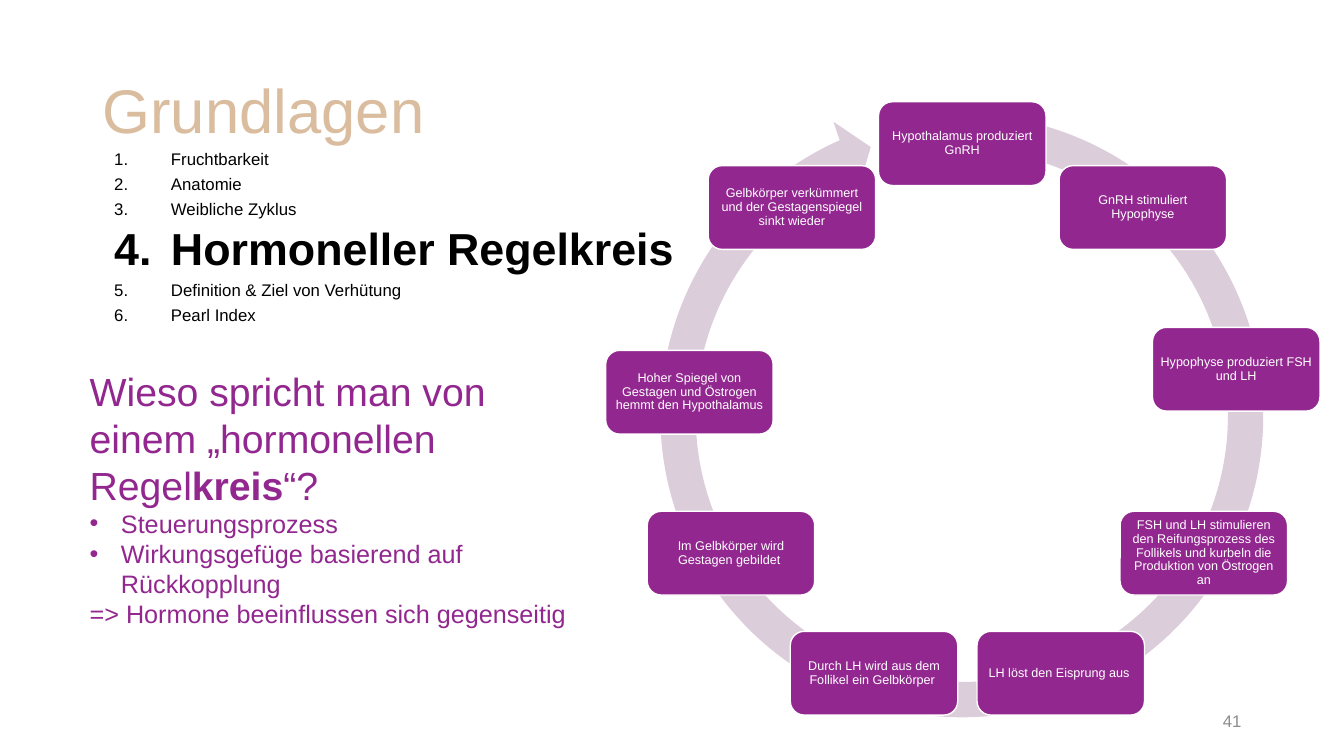
from math import cos, radians, sin

from lxml import etree
from pptx import Presentation
from pptx.dml.color import RGBColor
from pptx.enum.shapes import MSO_SHAPE
from pptx.enum.text import MSO_ANCHOR, MSO_AUTO_SIZE, PP_ALIGN
from pptx.oxml.ns import qn
from pptx.util import Cm, Pt

ARROW, ROUNDED = MSO_SHAPE.CIRCULAR_ARROW, MSO_SHAPE.ROUNDED_RECTANGLE
MIDDLE, NO_FIT = MSO_ANCHOR.MIDDLE, MSO_AUTO_SIZE.NONE
LEFT, CENTER, RIGHT = PP_ALIGN.LEFT, PP_ALIGN.CENTER, PP_ALIGN.RIGHT

FONT = "Arial"
COLORS = {"title": "DABC9E", "purple": "92278F", "ring": "DCCDDB",
          "black": "000000", "white": "FFFFFF", "grey": "8C8C8C"}

TOPICS = ["Fruchtbarkeit", "Anatomie", "Weibliche Zyklus",
          "Hormoneller Regelkreis", "Definition & Ziel von Verhütung",
          "Pearl Index"]
CURRENT_TOPIC = 3

QUESTION = ["Wieso spricht man von einem „hormonellen Regel", "kreis", "“?"]
ANSWERS = ["Steuerungsprozess", "Wirkungsgefüge basierend auf Rückkopplung",
           "=> Hormone beeinflussen sich gegenseitig"]

# Cycle steps, clockwise from the top: text, shift from the circle in cm
STEPS = [
    ("Hypothalamus produziert GnRH", -0.13, 0),
    ("GnRH stimuliert Hypophyse", 0, 0),
    ("Hypophyse produziert FSH und LH", 0, 0),
    ("FSH und LH stimulieren den Reifungsprozess des Follikels und "
     "kurbeln die Produktion von Östrogen an", 0, 0),
    ("LH löst den Eisprung aus ", 0, 0),
    ("Durch LH wird aus dem Follikel ein Gelbkörper ", 0, 0),
    ("Im Gelbkörper wird Gestagen gebildet ", 0, 0),
    ("Hoher Spiegel von Gestagen und Östrogen hemmt den Hypothalamus",
     -0.23, 0.58),
    ("Gelbkörper verkümmert und der Gestagenspiegel sinkt wieder", 0, 0),
]


def color(name):
    return RGBColor.from_string(COLORS[name])


def style(para, size, color_name, bold=False):
    for span in para.runs:
        span.font.name = FONT
        span.font.size = Pt(size)
        span.font.bold = bold
        span.font.color.rgb = color(color_name)


def add_bullet(para, margin, hanging, tag, **attributes):
    props = para._p.get_or_add_pPr()
    props.set("marL", str(Cm(margin)))
    props.set("indent", str(-Cm(hanging)))
    etree.SubElement(props, qn("a:buFont"), typeface=FONT)
    etree.SubElement(props, qn(tag), **attributes)


def add_text_frame(page, left, top, width, height):
    box = page.shapes.add_textbox(Cm(left), Cm(top), Cm(width), Cm(height))
    box.text_frame.word_wrap = True
    return box.text_frame


def fill_shape(shape, color_name):
    shape.shadow.inherit = False
    shape.fill.solid()
    shape.fill.fore_color.rgb = color(color_name)


def place_title(page, left, top, width, height):
    title = page.shapes.title
    title.left, title.top = Cm(left), Cm(top)
    title.width, title.height = Cm(width), Cm(height)
    frame = title.text_frame
    frame.text = "Grundlagen"
    frame.auto_size = NO_FIT
    frame.vertical_anchor = MIDDLE
    para = frame.paragraphs[0]
    para.alignment = LEFT
    para.line_spacing = 0.9
    style(para, 44, "title")


def place_agenda(page, left, top, width, height):
    frame = add_text_frame(page, left, top, width, height)
    frame.text = "\n".join(TOPICS)
    for index, para in enumerate(frame.paragraphs):
        add_bullet(para, 2.69, 1.43, "a:buAutoNum", type="arabicPeriod")
        para.line_spacing = 0.9
        if index:
            para.space_before = Pt(5)
        current = index == CURRENT_TOPIC
        style(para, 32 if current else 12, "black", current)


def place_question(page, left, top, width, height):
    frame = add_text_frame(page, left, top, width, height)
    question = frame.paragraphs[0]
    for part in QUESTION:
        question.add_run().text = part
    style(question, 28, "purple")
    question.runs[1].font.bold = True
    for answer in ANSWERS:
        para = frame.add_paragraph()
        para.text = answer
        if not answer.startswith("=>"):
            add_bullet(para, 0.79, 0.79, "a:buChar", char="•")
        style(para, 18, "purple")


def place_page_number(page, left, top, width, height):
    frame = add_text_frame(page, left, top, width, height)
    frame.text = "41"
    frame.vertical_anchor = MIDDLE
    frame.paragraphs[0].alignment = RIGHT
    style(frame.paragraphs[0], 12, "grey")


def place_step(page, text, left, top, width, height):
    step = page.shapes.add_shape(ROUNDED, Cm(left), Cm(top),
                                 Cm(width), Cm(height))
    fill_shape(step, "purple")
    step.line.color.rgb = color("white")
    step.line.width = Pt(1)
    frame = step.text_frame
    frame.text = text
    frame.word_wrap = True
    frame.vertical_anchor = MIDDLE
    frame.margin_left = frame.margin_right = Cm(0.1)
    frame.margin_top = frame.margin_bottom = Cm(0.1)
    para = frame.paragraphs[0]
    para.alignment = CENTER
    para.line_spacing = 0.9
    style(para, 9, "white")


def place_cycle(page, left, top, size):
    # Ring with arrowhead
    ring = page.shapes.add_shape(ARROW, Cm(left), Cm(top), Cm(size), Cm(size))
    for index, value in enumerate([0.055, 3.307, 147.464, 168.193, 0.058]):
        ring.adjustments[index] = value
    fill_shape(ring, "ring")
    ring.line.fill.background()

    # Steps at equal angles around the ring
    center_x, center_y = left + size / 2 + 0.14, top + size / 2 + 0.02
    radius, width, height = 6.88, 4.22, 2.11
    for index, (text, shift_x, shift_y) in enumerate(STEPS):
        angle = radians(index * 360 / len(STEPS))
        x = center_x + radius * sin(angle) + shift_x
        y = center_y - radius * cos(angle) + shift_y
        place_step(page, text, x - width / 2, y - height / 2, width, height)


def main():
    deck = Presentation()
    deck.slide_width, deck.slide_height = Cm(33.87), Cm(19.05)
    page = deck.slides.add_slide(deck.slide_layouts[5])
    place_title(page, 2.33, 1.01, 29.21, 3.68)
    place_agenda(page, 1.37, 3.68, 29.21, 12.09)
    place_page_number(page, 23.92, 17.66, 7.62, 1.01)
    place_question(page, 2.01, 9.12, 12.85, 6.93)
    place_cycle(page, 16.15, 2.39, 16.18)
    deck.save("out.pptx")


if __name__ == "__main__":
    main()
